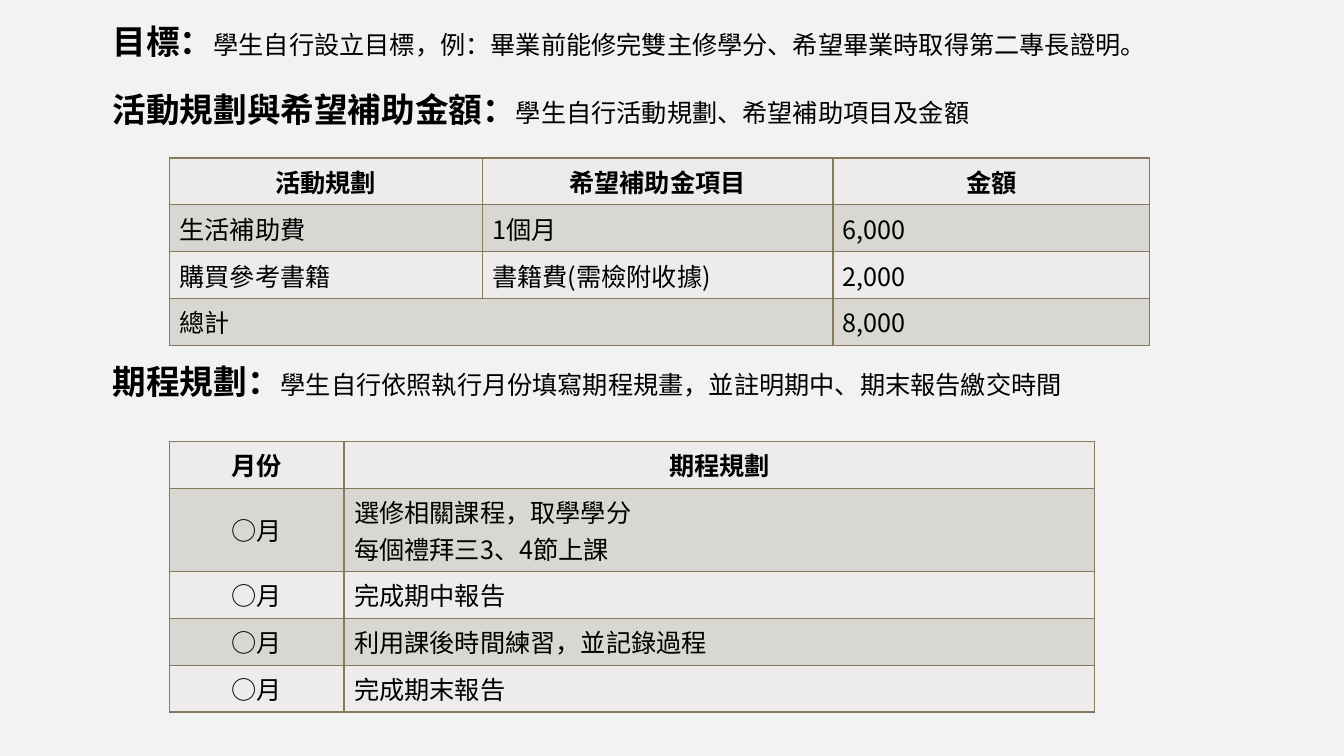
from dataclasses import dataclass

from lxml.etree import SubElement
from pptx import Presentation
from pptx.dml.color import RGBColor
from pptx.enum.text import MSO_ANCHOR, MSO_AUTO_SIZE, PP_ALIGN
from pptx.oxml.ns import qn
from pptx.util import Cm, Pt


@dataclass(frozen=True)
class Theme:
    font: str = "Noto Sans CJK SC"
    ink: str = "000000"
    background: str = "F2F2F2"
    bands: tuple = ("EDECEA", "D9D7D2")
    border: str = "87795D"
    border_width: int = Pt(1)
    heading_size: int = 24
    body_size: int = 18


class PlanSlide:
    def __init__(self, presentation, theme):
        self.theme = theme
        blank_layout = presentation.slide_layouts[6]
        self.slide = presentation.slides.add_slide(blank_layout)
        self.paint(self.slide.background.fill, theme.background)

    def paint(self, fill, color):
        fill.solid()
        fill.fore_color.rgb = RGBColor.from_string(color)

    def add_run(self, paragraph, text, size, bold=False):
        run = paragraph.add_run()
        run.text = text
        font = run.font
        font.size, font.bold, font.name = Pt(size), bold, self.theme.font
        font.color.rgb = RGBColor.from_string(self.theme.ink)
        east_asian = SubElement(run._r.get_or_add_rPr(), qn("a:ea"))
        east_asian.set("typeface", self.theme.font)

    def add_section(self, top, width, heading, explanation, align=PP_ALIGN.LEFT):
        section = self.slide.shapes.add_textbox(Cm(2.59), Cm(top), Cm(width), Cm(1.28))
        frame = section.text_frame
        frame.word_wrap = False
        frame.auto_size = MSO_AUTO_SIZE.SHAPE_TO_FIT_TEXT
        paragraph = frame.paragraphs[0]
        paragraph.alignment = align
        self.add_run(paragraph, heading, self.theme.heading_size, bold=True)
        self.add_run(paragraph, explanation, self.theme.body_size)

    def add_borders(self, cell):
        properties = cell._tc.get_or_add_tcPr()
        for side in ("lnL", "lnR", "lnT", "lnB"):
            line = SubElement(properties, qn(f"a:{side}"), w=str(self.theme.border_width))
            fill = SubElement(line, qn("a:solidFill"))
            SubElement(fill, qn("a:srgbClr"), val=self.theme.border)

    def add_plan_table(self, top, widths, heights, rows, centered_columns=()):
        """Add a banded table; None in a row extends the cell to its left."""
        table = self.slide.shapes.add_table(
            len(rows), len(widths), Cm(4.27), Cm(top), Cm(sum(widths)), Cm(sum(heights))
        ).table
        for column, width in zip(table.columns, widths):
            column.width = Cm(width)
        for r, (entries, height) in enumerate(zip(rows, heights)):
            table.rows[r].height = Cm(height)
            for c, entry in enumerate(entries):
                cell = table.cell(r, c)
                self.add_borders(cell)
                self.paint(cell.fill, self.theme.bands[r % 2])
                cell.vertical_anchor = MSO_ANCHOR.MIDDLE
                if entry is None:
                    table.cell(r, c - 1).merge(cell)
                    continue
                is_header = r == 0
                centered = is_header or c in centered_columns
                frame = cell.text_frame
                for i, text in enumerate(entry.split("\n")):
                    paragraph = frame.add_paragraph() if i else frame.paragraphs[0]
                    paragraph.alignment = PP_ALIGN.CENTER if centered else PP_ALIGN.LEFT
                    self.add_run(paragraph, text, self.theme.body_size, bold=is_header)


def main():
    presentation = Presentation()
    presentation.slide_width, presentation.slide_height = Cm(33.87), Cm(19.05)
    plan = PlanSlide(presentation, Theme())
    row_height, two_line_height = 1.18, 2.1

    budget = [
        ("活動規劃", "希望補助金項目", "金額"),
        ("生活補助費", "1個月", "6,000"),
        ("購買參考書籍", "書籍費(需檢附收據)", "2,000"),
        ("總計", None, "8,000"),
    ]
    plan.add_plan_table(3.98, (7.88, 8.84, 7.98), [row_height] * len(budget), budget)

    schedule = [
        ("月份", "期程規劃"),
        ("○月", "選修相關課程，取學學分\n每個禮拜三3、4節上課"),
        ("○月", "完成期中報告"),
        ("○月", "利用課後時間練習，並記錄過程"),
        ("○月", "完成期末報告"),
    ]
    schedule_heights = [
        two_line_height if "\n" in activity else row_height for _, activity in schedule
    ]
    plan.add_plan_table(
        11.12, (4.4, 18.92), schedule_heights, schedule, centered_columns=(0,)
    )

    plan.add_section(
        0.4, 26.8, "目標：",
        "學生自行設立目標，例：畢業前能修完雙主修學分、希望畢業時取得第二專長證明。",
        align=PP_ALIGN.JUSTIFY,
    )
    plan.add_section(
        2.12, 22.96, "活動規劃與希望補助金額：", "學生自行活動規劃、希望補助項目及金額"
    )
    plan.add_section(
        8.97, 24.66, "期程規劃：",
        "學生自行依照執行月份填寫期程規畫，並註明期中、期末報告繳交時間",
    )
    presentation.save("out.pptx")


if __name__ == "__main__":
    main()
